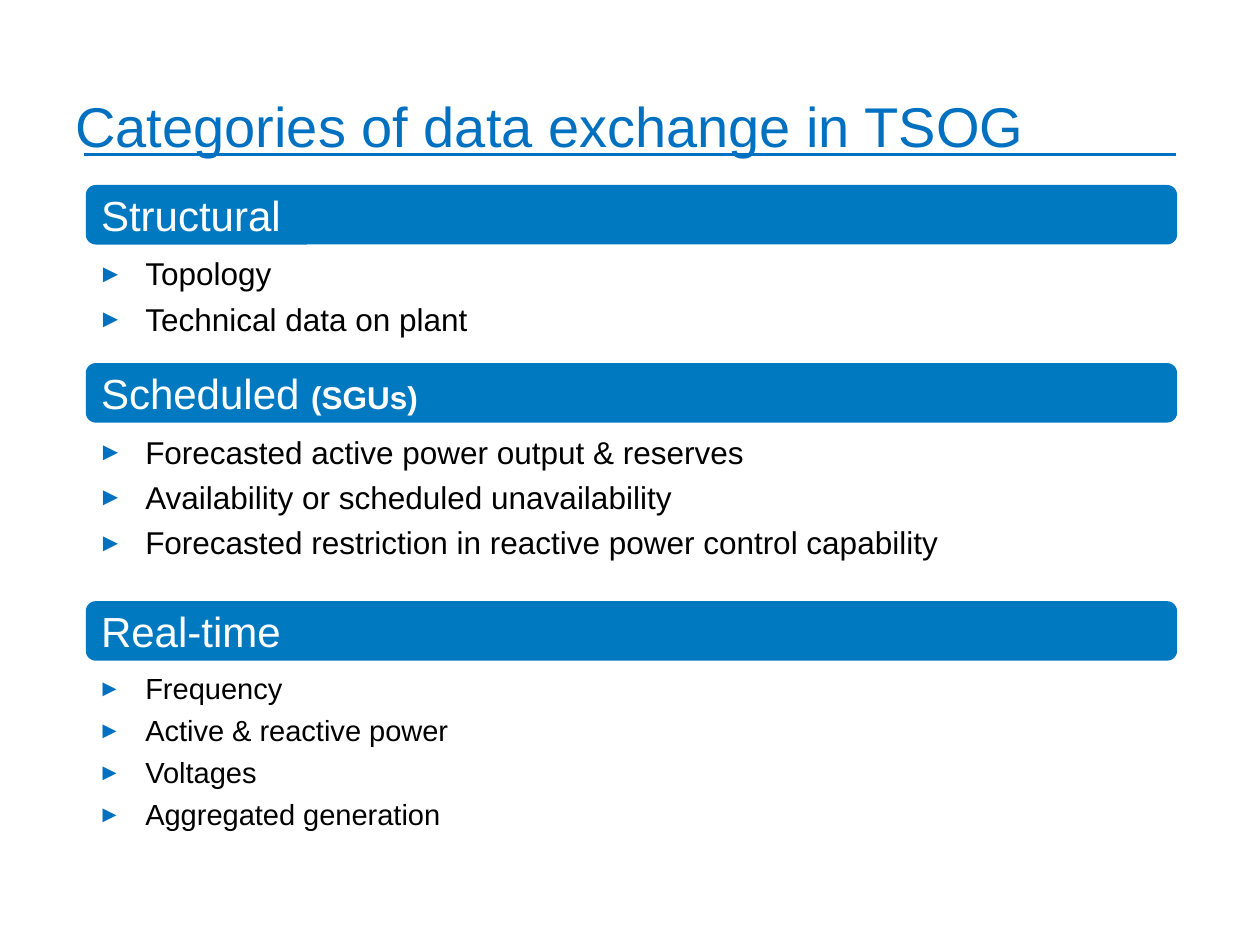
from dataclasses import dataclass

from lxml.etree import SubElement
from pptx import Presentation
from pptx.dml.color import RGBColor
from pptx.enum.shapes import MSO_CONNECTOR as Connector, MSO_SHAPE as Shape
from pptx.enum.text import MSO_ANCHOR as Anchor, PP_ALIGN as Align
from pptx.oxml.ns import qn
from pptx.util import Cm, Pt

TITLE = "Categories of data exchange in TSOG"
# Each section: top in cm, heading runs as (text, style), list size in points, items
SECTIONS = [
    (3.73, [("Structural", "heading")], 18,
     ["Topology", "Technical data on plant"]),
    (7.32, [("Scheduled ", "heading"), ("(SGUs)", "note")], 18,
     ["Forecasted active power output & reserves",
      "Availability or scheduled unavailability",
      "Forecasted restriction in reactive power control capability"]),
    (12.12, [("Real-time", "heading")], 16.6,
     ["Frequency", "Active & reactive power", "Voltages",
      "Aggregated generation"]),
]


@dataclass(frozen=True)
class Theme:
    font: str = "Arial"
    accent: str = "0070C0"
    bar: str = "0079C1"
    on_bar: str = "FFFFFF"
    body: str = "000000"
    title_size: float = 32
    heading_size: float = 24
    note_size: float = 18


THEME = Theme()
LEFT, WIDTH, BAR_HEIGHT = 1.73, 22.0, 1.2
LIST_INDENT = Cm(0.95)


def style_font(font, size, color, bold=False):
    font.name = THEME.font
    font.size = Pt(size)
    font.bold = bold
    font.color.rgb = RGBColor.from_string(color)


def add_bullet(paragraph):
    """Give the paragraph a hanging indent and a coloured arrow bullet."""
    properties = paragraph._p.get_or_add_pPr()
    properties.set("marL", str(LIST_INDENT))
    properties.set("indent", str(-LIST_INDENT))
    color = SubElement(properties, qn("a:buClr"))
    SubElement(color, qn("a:srgbClr"), val=THEME.accent)
    SubElement(properties, qn("a:buSzPct"), val="80000")
    SubElement(properties, qn("a:buFont"), typeface=THEME.font)
    SubElement(properties, qn("a:buChar"), char="►")


def add_title(slide):
    rule = slide.shapes.add_connector(
        Connector.STRAIGHT, Cm(1.7), Cm(3.12), Cm(23.7), Cm(3.12))
    rule.line.color.rgb = RGBColor.from_string(THEME.accent)
    rule.line.width = Pt(1.5)
    SubElement(rule._element.spPr, qn("a:effectLst"))

    box = slide.shapes.add_textbox(Cm(1.27), Cm(1.12), Cm(21.44), Cm(2.21))
    frame = box.text_frame
    frame.word_wrap = True
    frame.vertical_anchor = Anchor.BOTTOM
    frame.text = TITLE
    style_font(frame.paragraphs[0].runs[0].font, THEME.title_size, THEME.accent)


def add_heading(slide, top, parts):
    bar = slide.shapes.add_shape(
        Shape.ROUNDED_RECTANGLE, Cm(LEFT), Cm(top), Cm(WIDTH), Cm(BAR_HEIGHT))
    bar.shadow.inherit = False
    bar.fill.solid()
    bar.fill.fore_color.rgb = RGBColor.from_string(THEME.bar)
    bar.line.fill.background()
    bar.text_frame.vertical_anchor = Anchor.MIDDLE
    paragraph = bar.text_frame.paragraphs[0]
    paragraph.alignment = Align.LEFT
    for text, style in parts:
        run = paragraph.add_run()
        run.text = text
        is_note = style == "note"
        size = THEME.note_size if is_note else THEME.heading_size
        style_font(run.font, size, THEME.on_bar, bold=is_note)


def add_list(slide, top, size, items):
    height = 0.3 + len(items) * size * 0.05
    box = slide.shapes.add_textbox(Cm(LEFT), Cm(top), Cm(WIDTH), Cm(height))
    frame = box.text_frame
    frame.word_wrap = True
    frame.margin_top = Cm(0.2)
    frame.text = "\n".join(items)
    for index, paragraph in enumerate(frame.paragraphs):
        add_bullet(paragraph)
        if index:
            paragraph.space_before = Pt(round(size * 0.245, 1))
        style_font(paragraph.runs[0].font, size, THEME.body)


def main():
    presentation = Presentation()
    presentation.slide_width = Cm(25.4)
    presentation.slide_height = Cm(19.05)
    slide = presentation.slides.add_slide(presentation.slide_layouts[6])
    add_title(slide)
    for top, heading, size, items in SECTIONS:
        add_heading(slide, top, heading)
        add_list(slide, top + BAR_HEIGHT, size, items)
    presentation.save("out.pptx")


if __name__ == "__main__":
    main()
